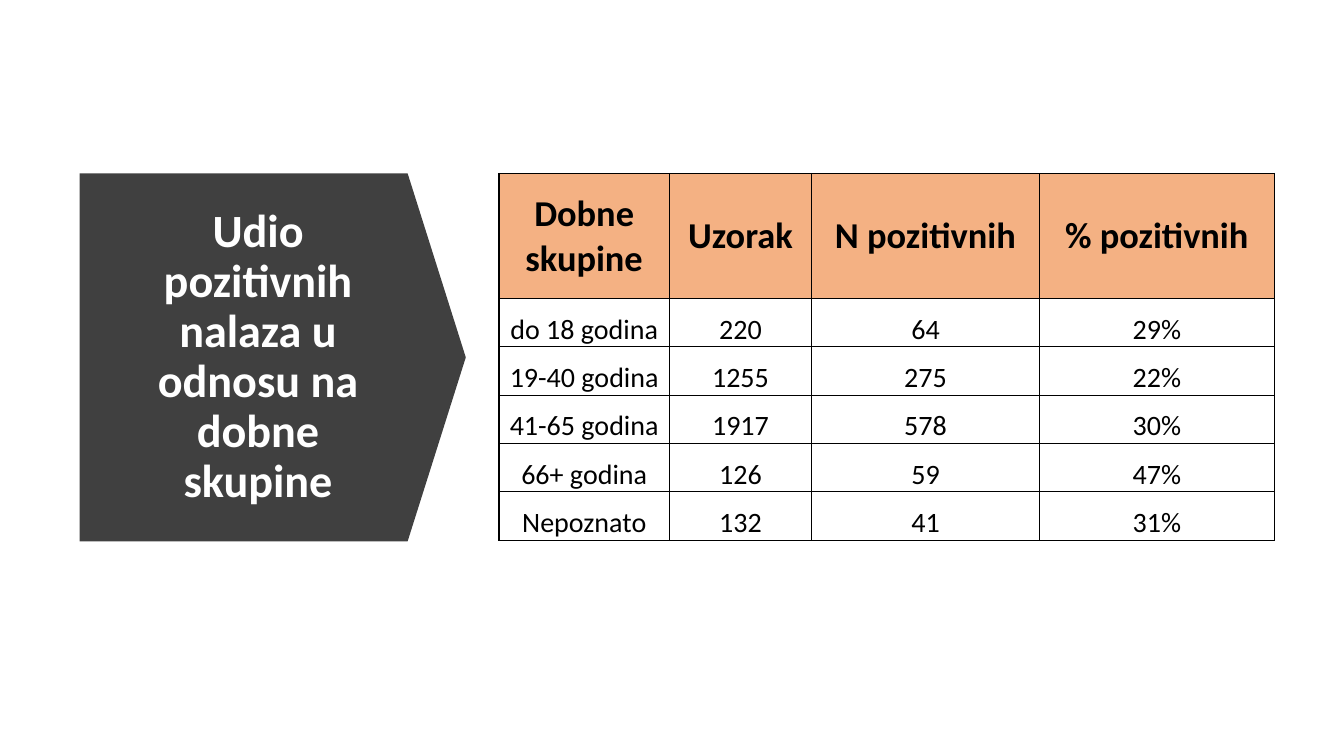
from dataclasses import dataclass

from lxml import etree
from pptx import Presentation
from pptx.dml.color import RGBColor
from pptx.enum.shapes import MSO_SHAPE
from pptx.enum.text import MSO_ANCHOR, PP_ALIGN
from pptx.oxml.ns import qn
from pptx.util import Inches, Pt

DOWN_ARROW = MSO_SHAPE.DOWN_ARROW
CENTER = PP_ALIGN.CENTER
MIDDLE, BOTTOM = MSO_ANCHOR.MIDDLE, MSO_ANCHOR.BOTTOM


@dataclass(frozen=True)
class Theme:
    font: str = "Calibri"
    dark: str = "404040"
    light: str = "FFFFFF"
    ink: str = "000000"
    header: str = "F4B183"
    title_size: int = 33
    header_size: int = 26
    body_size: int = 20
    border_width: int = 1


THEME = Theme()
TITLE = "Udio pozitivnih nalaza u odnosu na dobne skupine"
HEADINGS = ("Dobne skupine", "Uzorak", "N pozitivnih", "% pozitivnih")
AGE_GROUPS = (
    ("do 18 godina", "220", "64", "29%"),
    ("19-40 godina", "1255", "275", "22%"),
    ("41-65 godina", "1917", "578", "30%"),
    ("66+ godina", "126", "59", "47%"),
    ("Nepoznato", "132", "41", "31%"),
)
COLUMN_WIDTHS = (1.69, 1.41, 2.26, 2.33)
HEADER_HEIGHT, ROW_HEIGHT = 1.24, 0.48


def apply_format(target, values):
    for name, value in values.items():
        setattr(target, name, value)


def box(left, top, width, height):
    return [Inches(length) for length in (left, top, width, height)]


def write_text(frame, text, size, color, bold):
    paragraph = frame.paragraphs[0]
    paragraph.alignment = CENTER
    run = paragraph.add_run()
    run.text = text
    apply_format(run.font, {"name": THEME.font, "size": Pt(size), "bold": bold})
    run.font.color.rgb = RGBColor.from_string(color)
    return paragraph


def add_arrow(slide):
    arrow = slide.shapes.add_shape(DOWN_ARROW, *box(0.88, 1.63, 3.65, 3.83))
    arrow.rotation = 270
    arrow.shadow.inherit = False
    arrow.adjustments[0] = 1
    arrow.adjustments[1] = 0.158
    arrow.fill.solid()
    arrow.fill.fore_color.rgb = RGBColor.from_string(THEME.dark)
    arrow.line.fill.background()


def add_title(slide):
    frame = slide.shapes.add_textbox(*box(1.12, 2.15, 2.88, 2.79)).text_frame
    apply_format(frame, {"word_wrap": True, "vertical_anchor": MIDDLE})
    paragraph = write_text(frame, TITLE, THEME.title_size, THEME.light, True)
    paragraph.line_spacing = 0.9


def add_borders(cell):
    properties = cell._tc.get_or_add_tcPr()
    for position, side in enumerate(("lnL", "lnR", "lnT", "lnB")):
        border = etree.Element(qn(f"a:{side}"), w=str(Pt(THEME.border_width)))
        fill = etree.SubElement(border, qn("a:solidFill"))
        etree.SubElement(fill, qn("a:srgbClr"), val=THEME.ink)
        properties.insert(position, border)


def format_cell(cell, text, is_header):
    apply_format(cell, {
        "margin_left": Inches(0.01),
        "margin_right": Inches(0.01),
        "margin_top": Inches(0.01),
        "margin_bottom": 0,
        "vertical_anchor": MIDDLE if is_header else BOTTOM,
    })
    if is_header:
        cell.fill.solid()
        cell.fill.fore_color.rgb = RGBColor.from_string(THEME.header)
    else:
        cell.fill.background()
    size = THEME.header_size if is_header else THEME.body_size
    write_text(cell.text_frame, text, size, THEME.ink, is_header)
    add_borders(cell)


def add_age_table(slide):
    rows = (HEADINGS, *AGE_GROUPS)
    heights = [HEADER_HEIGHT] + [ROW_HEIGHT] * len(AGE_GROUPS)
    area = box(4.95, 1.72, sum(COLUMN_WIDTHS), sum(heights))
    table = slide.shapes.add_table(len(rows), len(HEADINGS), *area).table
    apply_format(table, {"first_row": False, "horz_banding": False})
    for column, width in zip(table.columns, COLUMN_WIDTHS):
        column.width = Inches(width)
    for row_index, (values, height) in enumerate(zip(rows, heights)):
        table.rows[row_index].height = Inches(height)
        for column_index, text in enumerate(values):
            format_cell(table.cell(row_index, column_index), text, row_index == 0)


def main():
    deck = Presentation()
    apply_format(deck, {"slide_width": Inches(13.33), "slide_height": Inches(7.5)})
    slide = deck.slides.add_slide(deck.slide_layouts[6])
    add_arrow(slide)
    add_title(slide)
    add_age_table(slide)
    deck.save("out.pptx")


if __name__ == "__main__":
    main()
